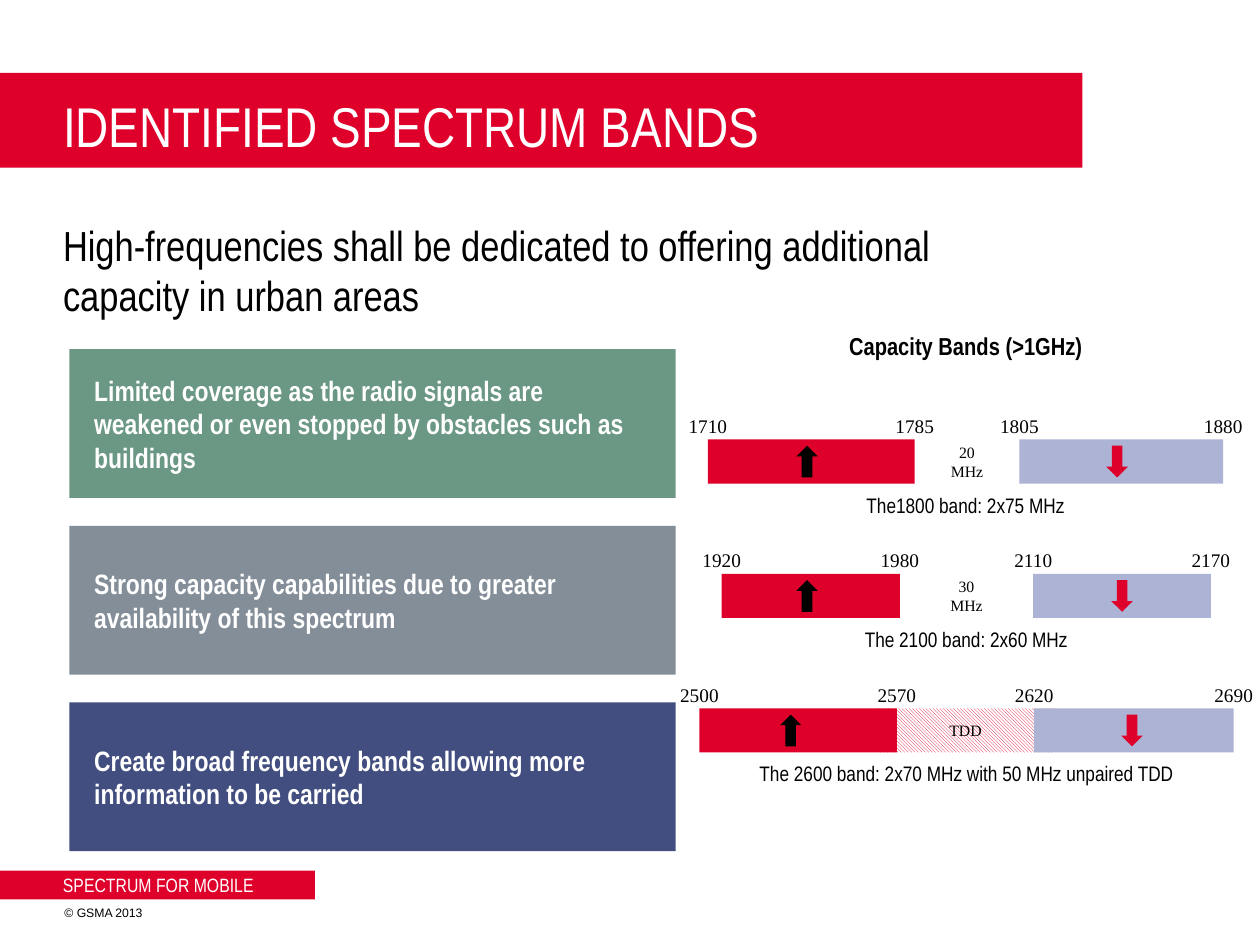
"""Build the slide on identified high-frequency spectrum bands."""
from pptx import Presentation
from pptx import util as u
from pptx.dml.color import RGBColor
from pptx.enum import dml, shapes, text
from pptx.oxml.xmlchemy import OxmlElement

RED = RGBColor(0xDE, 0x00, 0x2B)
GREEN = RGBColor(0x6B, 0x97, 0x85)
GREY = RGBColor(0x83, 0x8E, 0x99)
NAVY = RGBColor(0x43, 0x4E, 0x80)
LILAC = RGBColor(0xAC, 0xB3, 0xD4)
BLACK = RGBColor(0x00, 0x00, 0x00)
WHITE = RGBColor(0xFF, 0xFF, 0xFF)

NARROW, SERIF = "Arial Narrow", "Times New Roman"
CENTER = text.PP_ALIGN.CENTER
MIDDLE = text.MSO_ANCHOR.MIDDLE

TITLE = "IDENTIFIED SPECTRUM BANDS"
MESSAGE = "High-frequencies shall be dedicated to offering additional capacity in urban areas"
BANNERS = [(1.47, 21.82, 1.91), (17.55, 6.35, 0.58)]
FOOTERS = [
    ("SPECTRUM FOR MOBILE", (1.27, 17.55, 7.59, 0.56), NARROW, 11, WHITE),
    ("© GSMA 2013", (1.3, 18.19, 4, 0.43), "Arial", 7, BLACK),
]
POINTS = [
    ("Limited coverage as the radio signals are weakened or even stopped "
     "by obstacles such as buildings", GREEN),
    ("Strong capacity capabilities due to greater availability of this spectrum", GREY),
    ("Create broad frequency bands allowing more information to be carried", NAVY),
]
CHART_HEADING = "Capacity Bands (>1GHz)"
BANDS = [
    {"limits": ["1710", "1785", "1805", "1880"], "edges": [14.27, 18.44, 20.55, 24.66],
     "arrows": (16.27, 22.52), "gap": ["20", "MHz"], "overlap": 0,
     "caption": "The1800 band: 2x75 MHz"},
    {"limits": ["1920", "1980", "2110", "2170"], "edges": [14.55, 18.14, 20.83, 24.41],
     "arrows": (16.27, 22.62), "gap": ["30", "MHz"], "overlap": 0,
     "caption": "The 2100 band: 2x60 MHz"},
    {"limits": ["2500", "2570", "2620", "2690"], "edges": [14.1, 18.08, 20.85, 24.87],
     "arrows": (15.94, 22.82), "gap": ["TDD"], "overlap": 0.38,
     "caption": "The 2600 band: 2x70 MHz with 50 MHz unpaired TDD"},
]
POINT_TOP, POINT_PITCH = 7.04, 3.56
BAND_TOP, BAND_PITCH, BAR_HEIGHT = 8.86, 2.71, 0.89
LIMIT_WIDTH, GAP_TEXT_WIDTH, GAP_TEXT_HEIGHT = 1.3, 1.7, 1.02
ARROW_LENGTH, ARROW_WIDTH = 0.64, 0.43


def write(box, lines, name, size, color, bold=False, align=text.PP_ALIGN.LEFT,
          anchor=text.MSO_ANCHOR.TOP, wrap=True, inset=(0.25, 0.13)):
    frame = box.text_frame
    side, edge = (u.Cm(value) for value in inset)
    layout = {"auto_size": text.MSO_AUTO_SIZE.NONE, "word_wrap": wrap,
              "vertical_anchor": anchor, "margin_left": side, "margin_right": side,
              "margin_top": edge, "margin_bottom": edge}
    for key, value in layout.items():
        setattr(frame, key, value)
    frame.text = "\n".join(lines)
    for para in frame.paragraphs:
        para.alignment = align
        para.space_before = u.Pt(0)
        for span in para.runs:
            for key, value in {"name": name, "size": u.Pt(size), "bold": bold}.items():
                setattr(span.font, key, value)
            span.font.color.rgb = color


def add_text(page, place, lines, *style, **options):
    box = page.shapes.add_textbox(*map(u.Cm, place))
    write(box, lines, *style, **options)


def add_block(page, place, color, kind=shapes.MSO_SHAPE.RECTANGLE):
    block = page.shapes.add_shape(kind, *map(u.Cm, place))
    block.shadow.inherit = False
    block.fill.solid()
    block.fill.fore_color.rgb = color
    block.line.fill.background()
    return block


def fill_placeholder(box, place, *style, **options):
    box.left, box.top, box.width, box.height = map(u.Cm, place)
    write(box, *style, inset=(0, 0), **options)


def add_band(page, band, top):
    start, gap_start, gap_end, end = band["edges"]
    middle = top + BAR_HEIGHT / 2
    overlap = band["overlap"]
    gap_width = gap_end - gap_start + 2 * overlap
    gap = add_block(page, (gap_start - overlap, top, gap_width, BAR_HEIGHT), WHITE)
    if overlap:
        gap.fill.patterned()
        gap.fill.pattern = dml.MSO_PATTERN.LIGHT_DOWNWARD_DIAGONAL
        gap.fill.fore_color.rgb = RED
        gap.fill.back_color.rgb = WHITE
    add_block(page, (start, top, gap_start - start, BAR_HEIGHT), RED)
    add_block(page, (gap_end, top, end - gap_end, BAR_HEIGHT), LILAC)
    for label, edge in zip(band["limits"], band["edges"]):
        add_text(page, (edge - LIMIT_WIDTH / 2, top - 0.64, LIMIT_WIDTH, 0.74),
                 [label], SERIF, 11, BLACK, align=CENTER, wrap=False)
    gap_left = (gap_start + gap_end - GAP_TEXT_WIDTH) / 2
    add_text(page, (gap_left, middle - GAP_TEXT_HEIGHT / 2, GAP_TEXT_WIDTH, GAP_TEXT_HEIGHT),
             band["gap"], SERIF, 9, BLACK, align=CENTER, anchor=MIDDLE)
    add_text(page, (start, top + 0.93, end - start, 0.76),
             [band["caption"]], NARROW, 12, BLACK, align=CENTER)
    for center, color, turn in zip(band["arrows"], (BLACK, RED), (270, 90)):
        place = (center - ARROW_LENGTH / 2, middle - ARROW_WIDTH / 2,
                 ARROW_LENGTH, ARROW_WIDTH)
        arrow = add_block(page, place, color, shapes.MSO_SHAPE.RIGHT_ARROW)
        arrow.rotation = turn


def main():
    deck = Presentation()
    deck.slide_width, deck.slide_height = u.Cm(25.4), u.Cm(19.05)
    page = deck.slides.add_slide(deck.slide_layouts[1])
    title, body = page.placeholders

    for top, width, height in BANNERS:
        banner = add_block(page, (0, top, width, height), RED)
        title._element.addprevious(banner._element)
    fill_placeholder(title, (1.27, 1.57, 20.55, 1.91), [TITLE], NARROW, 32, WHITE,
                     anchor=MIDDLE)
    fill_placeholder(body, (1.27, 4.42, 18.34, 1.04), [MESSAGE], NARROW, 24, BLACK)
    settings = body.text_frame.paragraphs[0]._p.get_or_add_pPr()
    settings.set("marL", "0")
    settings.set("indent", "0")
    settings.append(OxmlElement("a:buNone"))

    for line, place, name, size, color in FOOTERS:
        add_text(page, place, [line], name, size, color, anchor=MIDDLE, inset=(0, 0))
    add_text(page, (16.84, 6.55, 5.26, 0.86), [CHART_HEADING], NARROW, 14, BLACK,
             bold=True, align=CENTER, wrap=False)
    for row, band in enumerate(BANDS):
        add_band(page, band, BAND_TOP + row * BAND_PITCH)
    for row, (point, color) in enumerate(POINTS):
        block = add_block(page, (1.4, POINT_TOP + row * POINT_PITCH, 12.22, 3), color)
        write(block, [point], NARROW, 16, WHITE, bold=True, anchor=MIDDLE,
              inset=(0.5, 0.13))
    deck.save("out.pptx")


if __name__ == "__main__":
    main()
